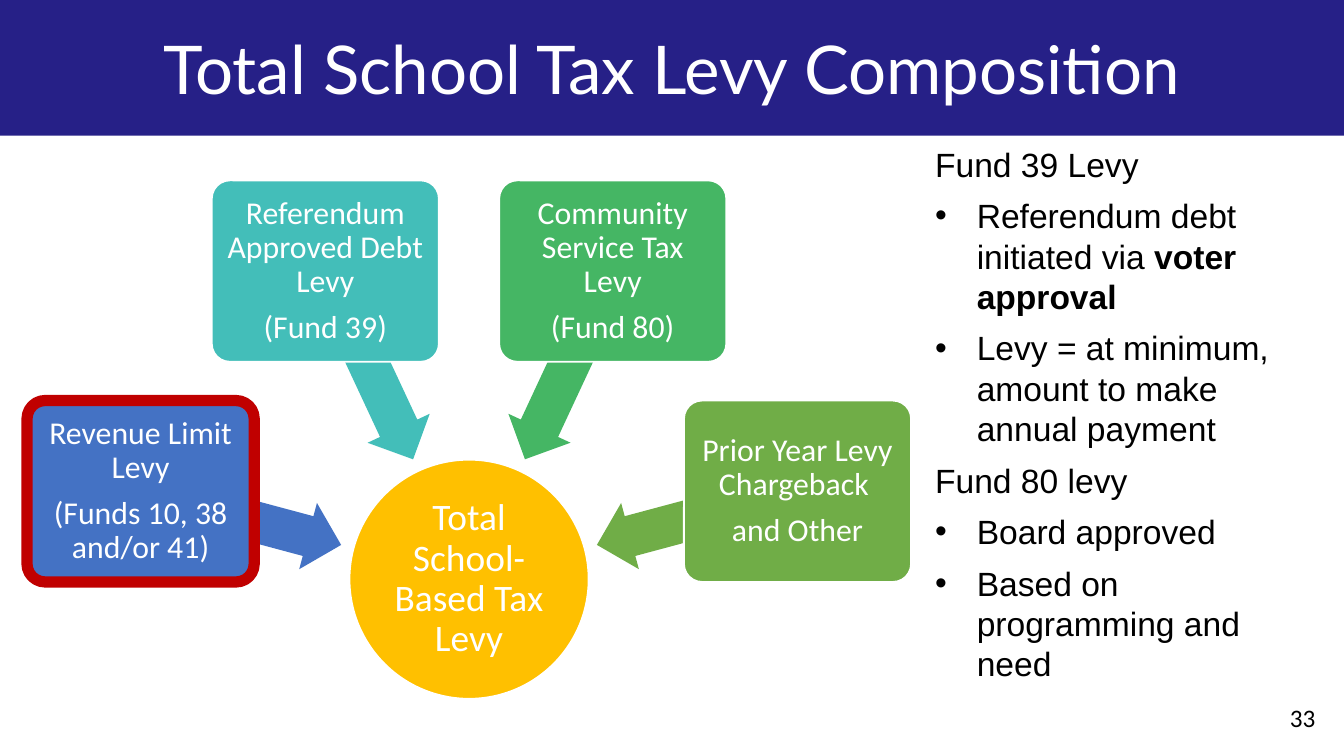
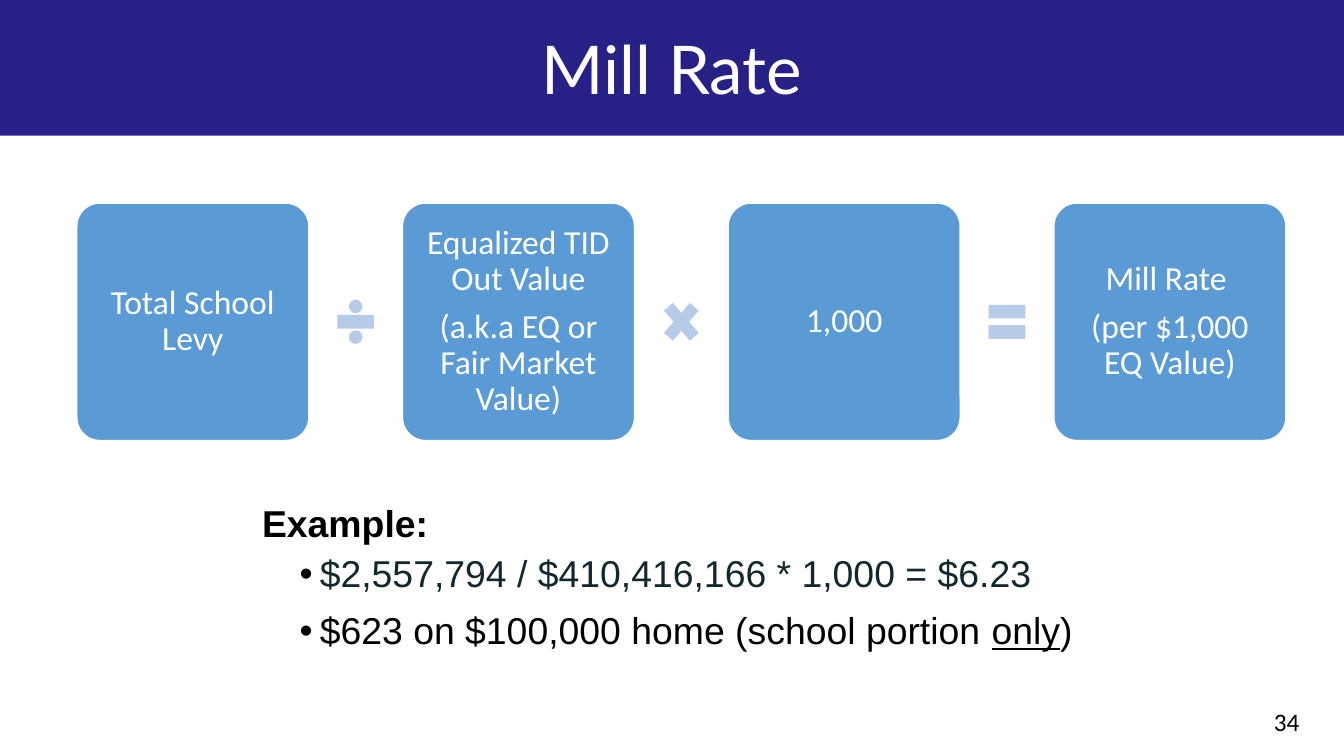
from math import cos, radians, sin

from lxml.etree import SubElement
from pptx import Presentation
from pptx.dml.color import RGBColor
from pptx.enum.shapes import MSO_SHAPE as Preset
from pptx.enum.text import MSO_ANCHOR as Anchor, MSO_AUTO_SIZE as AutoSize, PP_ALIGN as Align
from pptx.oxml.ns import qn
from pptx.util import Inches, Pt

WHITE = RGBColor(0xFF, 0xFF, 0xFF)
BLACK = RGBColor(0, 0, 0)
NAVY = RGBColor(0x26, 0x20, 0x87)
GOLD = RGBColor(0xFF, 0xC0, 0x00)
BLUE = RGBColor(0x44, 0x72, 0xC4)
TEAL = RGBColor(0x43, 0xBE, 0xB9)
GREEN = RGBColor(0x45, 0xB6, 0x64)
OLIVE = RGBColor(0x70, 0xAD, 0x47)
RED = RGBColor(0xC0, 0x00, 0x00)
SKY = RGBColor(0x5B, 0x9B, 0xD5)
PALE_BLUE = RGBColor(0xB5, 0xCB, 0xE7)
INK = RGBColor(0x11, 0x28, 0x2F)

HUB = "Total School-Based Tax Levy"
LEVIES = [
    (["Revenue Limit Levy", "(Funds 10, 38 and/or 41)"], BLUE, RED, 6),
    (["Referendum Approved Debt Levy", "(Fund 39)"], TEAL, WHITE, 1),
    (["Community Service Tax Levy", "(Fund 80)"], GREEN, WHITE, 1),
    (["Prior Year Levy Chargeback ", "and Other"], OLIVE, WHITE, 1),
]
FUND_NOTES = [
    (False, [("Fund 39 Levy", {})]),
    (True, [("Referendum debt initiated via ", {}), ("voter approval", {"bold": True})]),
    (True, [("Levy = at minimum, amount to make annual payment", {})]),
    (False, [("Fund 80 levy", {})]),
    (True, [("Board approved", {})]),
    (True, [("Based on programming and need", {})]),
]
FORMULA_TERMS = [
    ["Total School Levy"],
    ["Equalized TID Out Value", "(a.k.a EQ or Fair Market Value)"],
    ["1,000"],
    ["Mill Rate ", "(per $1,000 EQ Value)"],
]
OPERATORS = [Preset.MATH_DIVIDE, Preset.MATH_MULTIPLY, Preset.MATH_EQUAL]
EXAMPLE = [
    (False, [("Example:", {"bold": True})]),
    (True, [("$2,557,794 / $410,416,166 * 1,000 = $6.23", {"color": INK})]),
    (True, [("$623 on $100,000 home (school portion ", {}), ("only", {"underline": True}), (")", {})]),
]


def add_run(paragraph, text, font, size, color=BLACK, bold=None, underline=None):
    run = paragraph.add_run()
    run.text = text
    run.font.name = font
    run.font.size = Pt(size)
    run.font.color.rgb = color
    run.font.bold = bold
    run.font.underline = underline


def add_bullet(paragraph, margin, hanging):
    properties = paragraph._p.get_or_add_pPr()
    properties.set("marL", str(Inches(margin)))
    properties.set("indent", str(-Inches(hanging)))
    color = SubElement(properties, qn("a:buClr"))
    SubElement(color, qn("a:srgbClr"), val=str(BLACK))
    SubElement(properties, qn("a:buFont"), typeface="Arial")
    SubElement(properties, qn("a:buChar"), char="•")


def set_insets(frame, inset):
    frame.margin_left = frame.margin_right = Inches(inset)
    frame.margin_top = frame.margin_bottom = Inches(inset)


def paragraphs_for(frame, items):
    for index, item in enumerate(items):
        yield (frame.add_paragraph() if index else frame.paragraphs[0]), item


def add_shape(slide, preset, left, top, width, height, fill, line=None, line_width=1):
    shape = slide.shapes.add_shape(preset, Inches(left), Inches(top), Inches(width), Inches(height))
    shape.shadow.inherit = False
    shape.fill.solid()
    shape.fill.fore_color.rgb = fill
    if line is None:
        shape.line.fill.background()
    else:
        shape.line.color.rgb = line
        shape.line.width = Pt(line_width)
    return shape


def add_label(shape, lines, size, inset):
    frame = shape.text_frame
    frame.word_wrap = True
    frame.vertical_anchor = Anchor.MIDDLE
    set_insets(frame, inset)
    for paragraph, text in paragraphs_for(frame, lines):
        paragraph.alignment = Align.CENTER
        paragraph.line_spacing = 0.9
        paragraph.space_after = Pt(6)
        add_run(paragraph, text, "Calibri", size, WHITE)


def add_rounded_box(slide, left, top, width, height, fill, line=WHITE, line_width=1):
    box = add_shape(slide, Preset.ROUNDED_RECTANGLE, left, top, width, height, fill, line, line_width)
    box.adjustments[0] = 0.1
    return box


def add_text_box(slide, left, top, width, height):
    box = slide.shapes.add_textbox(Inches(left), Inches(top), Inches(width), Inches(height))
    box.text_frame.word_wrap = True
    return box.text_frame


def start_slide(presentation, title, number, number_place):
    slide = presentation.slides.add_slide(presentation.slide_layouts[6])
    add_shape(slide, Preset.RECTANGLE, -0.01, 0, 10.01, 1.01, NAVY)
    frame = add_text_box(slide, 0.5, 0.06, 9, 0.96)
    frame.vertical_anchor = Anchor.MIDDLE
    paragraph = frame.paragraphs[0]
    paragraph.alignment = Align.CENTER
    paragraph.line_spacing = 0.9
    add_run(paragraph, title, "Lato", 36, WHITE)
    add_run(add_text_box(slide, *number_place).paragraphs[0], number, "Calibri", 13.5)
    return slide


def build_levy_slide(presentation):
    slide = start_slide(presentation, "Total School Tax Levy Composition", "33", (9.5, 5.18, 0.46, 0.39))
    center_x, center_y, hub_size = 3.49, 4.31, 1.78
    arrow_radius, arrow_width, arrow_height = 1.76, 1.55, 0.51
    box_radius, box_width, box_height = 2.53, 1.69, 1.35

    def around_hub(radius, angle, width, height):
        left = center_x + radius * cos(radians(angle)) - width / 2
        top = center_y + radius * sin(radians(angle)) - height / 2
        return left, top, width, height

    hub = add_shape(slide, Preset.OVAL, *around_hub(0, 0, hub_size, hub_size), GOLD, WHITE)
    add_label(hub, [HUB], 20, 0.01)
    for index, (lines, fill, line, line_width) in enumerate(LEVIES):
        angle = 195 + 50 * index
        arrow = add_shape(slide, Preset.LEFT_ARROW,
                          *around_hub(arrow_radius, angle, arrow_width, arrow_height), fill)
        arrow.adjustments[0] = 0.6
        arrow.adjustments[1] = 0.5
        arrow.rotation = angle
        box = add_rounded_box(slide, *around_hub(box_radius, angle, box_width, box_height),
                              fill, line, line_width)
        add_label(box, lines, 17, 0.04)

    notes = add_text_box(slide, 6.86, 1.02, 3.03, 4.16)
    notes.auto_size = AutoSize.SHAPE_TO_FIT_TEXT
    for paragraph, (bulleted, runs) in paragraphs_for(notes, FUND_NOTES):
        if bulleted:
            add_bullet(paragraph, 0.31, 0.31)
        paragraph.space_after = Pt(6)
        for text, style in runs:
            add_run(paragraph, text, "Arial", 18, **style)


def build_mill_rate_slide(presentation):
    slide = start_slide(presentation, "Mill Rate", "34", (9.38, 5.21, 0.55, 0.35))
    first_left, last_left, top, width, height = 0.57, 7.84, 1.51, 1.73, 1.77
    sign_width, sign_height = 0.37, 0.43
    pitch = (last_left - first_left) / (len(FORMULA_TERMS) - 1)
    for index, lines in enumerate(FORMULA_TERMS):
        left = first_left + index * pitch
        add_label(add_rounded_box(slide, left, top, width, height, SKY), lines, 18, 0.07)
        if index < len(OPERATORS):
            sign_left = left + (width + pitch - sign_width) / 2
            sign_top = top + (height - sign_height) / 2
            add_shape(slide, OPERATORS[index], sign_left, sign_top, sign_width, sign_height, PALE_BLUE)

    example = add_text_box(slide, 1.95, 3.76, 6.73, 1.68)
    set_insets(example, 0)
    for paragraph, (bulleted, runs) in paragraphs_for(example, EXAMPLE):
        paragraph.line_spacing = 0.9
        if bulleted:
            paragraph.level = 1
            add_bullet(paragraph, 0.43, 0.15)
            paragraph.line_spacing = 0.95
            paragraph.space_before = paragraph.space_after = Pt(4)
        for text, style in runs:
            add_run(paragraph, text, "Arial", 20, **style)


def main():
    presentation = Presentation()
    presentation.slide_width = Inches(10)
    presentation.slide_height = Inches(10 * 9 / 16)
    build_levy_slide(presentation)
    build_mill_rate_slide(presentation)
    presentation.save("out.pptx")


if __name__ == "__main__":
    main()
